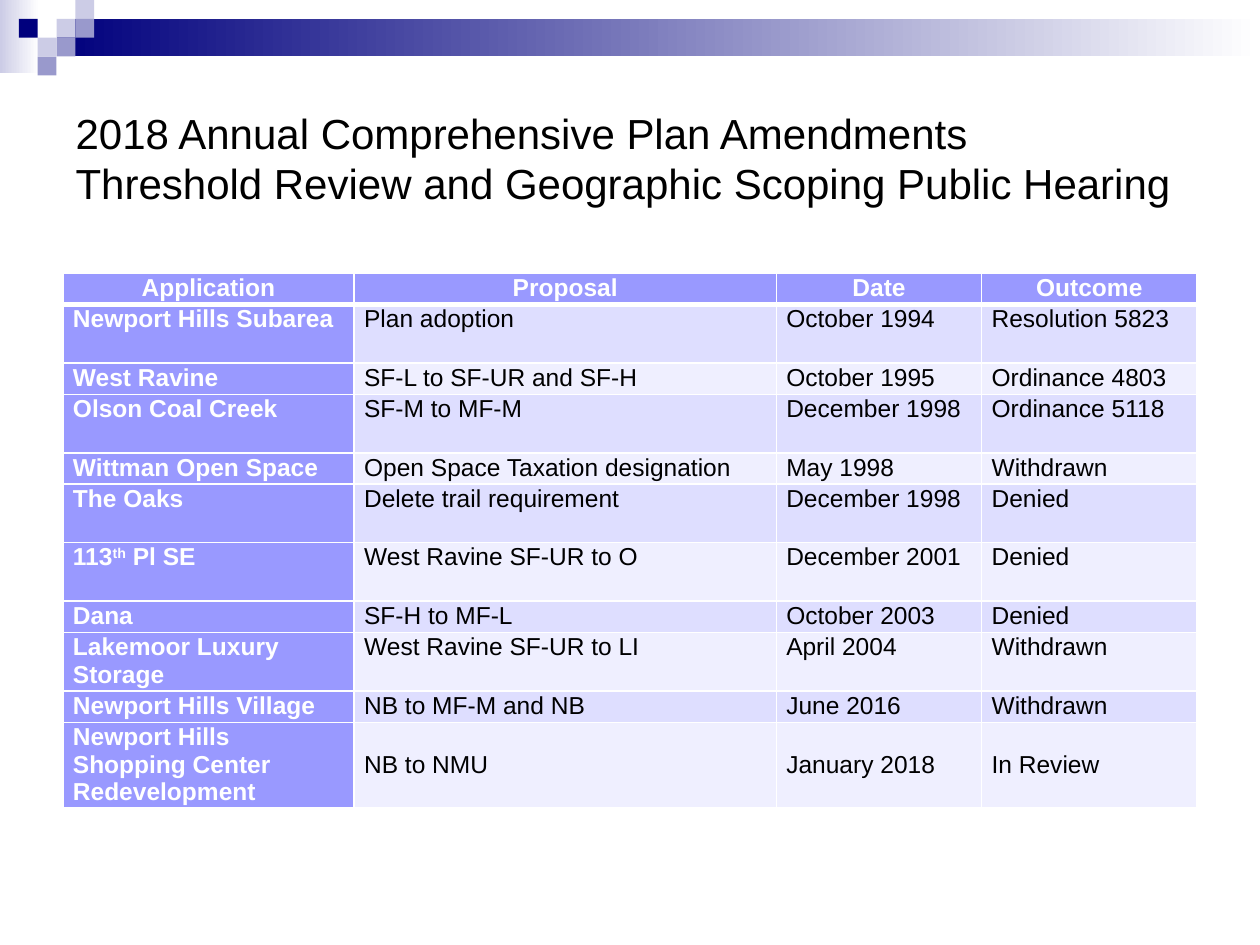
from lxml import etree
from pptx import Presentation
from pptx import util as u
from pptx.dml.color import RGBColor
from pptx.enum import shapes, text
from pptx.oxml import ns

SQUARE = 0.38
SQUARES = [  # column, row, colour
    (3, 1, "CCCCE6"), (4, 0, "CCCCE6"), (4, 1, "9999CC"), (2, 2, "CCCCE6"),
    (1, 1, "00007D"), (3, 2, "9999CC"), (2, 3, "9999CC"),
]

TITLE = ("2018 Annual Comprehensive Plan Amendments\v"
         "Threshold Review and Geographic Scoping Public Hearing")
COLUMN_WIDTHS = [5.87, 8.51, 4.14, 4.34]
ROW_HEIGHTS = {1: 0.63, 2: 1.18, 3: 1.73}  # by lines of text
# Lines of text, then the cells; ^ marks start and end of a superscript
ROWS = [
    (1, "Application", "Proposal", "Date", "Outcome"),
    (2, "Newport Hills Subarea", "Plan adoption", "October 1994", "Resolution 5823"),
    (1, "West Ravine", "SF-L to SF-UR and SF-H", "October 1995", "Ordinance 4803"),
    (2, "Olson Coal Creek", "SF-M to MF-M", "December 1998", "Ordinance 5118"),
    (1, "Wittman Open Space", "Open Space Taxation designation", "May 1998", "Withdrawn"),
    (2, "The Oaks", "Delete trail requirement", "December 1998", "Denied"),
    (2, "113^th^ Pl SE", "West Ravine SF-UR to O", "December 2001", "Denied"),
    (1, "Dana", "SF-H to MF-L", "October 2003", "Denied"),
    (2, "Lakemoor Luxury Storage", "West Ravine SF-UR to LI", "April 2004", "Withdrawn"),
    (1, "Newport Hills Village", "NB to MF-M and NB", "June 2016", "Withdrawn"),
    (3, "Newport Hills Shopping Center Redevelopment", "NB to NMU", "January 2018",
     "In Review"),
]


def color(value):
    return RGBColor.from_string(value)


class SlideBuilder:
    font_name = "Arial"
    accent = "9999FF"
    bands = ("EFEFFF", "DEDEFF")
    white = "FFFFFF"
    black = "000000"

    def __init__(self, slide):
        self.slide = slide

    def style_font(self, font, size, value, bold=False):
        font.name = self.font_name
        font.size = u.Pt(size)
        font.bold = bold
        font.color.rgb = color(value)

    def rectangle(self, left, top, width, height, *colors):
        """Draw a plain rectangle, or a left-to-right gradient for two colours."""
        shape = self.slide.shapes.add_shape(
            shapes.MSO_SHAPE.RECTANGLE, *map(u.Cm, (left, top, width, height)))
        shape.shadow.inherit = False
        shape.line.fill.background()
        if len(colors) == 1:
            shape.fill.solid()
            shape.fill.fore_color.rgb = color(colors[0])
        else:
            shape.fill.gradient()
            shape.fill.gradient_angle = 0
            for stop, value in zip(shape.fill.gradient_stops, colors):
                stop.color.rgb = color(value)

    def title(self, words, left, top, width, height):
        shape = self.slide.shapes.title
        shape.left, shape.top, shape.width, shape.height = map(
            u.Cm, (left, top, width, height))
        frame = shape.text_frame
        frame.text = words
        frame.word_wrap = True
        frame.auto_size = text.MSO_AUTO_SIZE.NONE
        frame.vertical_anchor = text.MSO_ANCHOR.MIDDLE
        paragraph = frame.paragraphs[0]
        paragraph.alignment = text.PP_ALIGN.LEFT
        self.style_font(paragraph.font, 24, self.black)

    def cell_borders(self, cell, top=1, bottom=1):
        properties = cell._tc.get_or_add_tcPr()
        for side, width in (("L", 1), ("R", 1), ("T", top), ("B", bottom)):
            line = etree.SubElement(properties, ns.qn(f"a:ln{side}"), w=str(u.Pt(width)))
            fill = etree.SubElement(line, ns.qn("a:solidFill"))
            etree.SubElement(fill, ns.qn("a:srgbClr"), val=self.white)

    def cell(self, cell, words, row, column):
        is_header = row == 0
        is_label = is_header or column == 0
        self.cell_borders(cell, top=3 if row == 1 else 1, bottom=3 if is_header else 1)
        cell.fill.solid()
        cell.fill.fore_color.rgb = color(self.accent if is_label else self.bands[row % 2])
        cell.margin_left = cell.margin_right = u.Cm(0.2)
        cell.margin_top = cell.margin_bottom = u.Cm(0.02)
        paragraph = cell.text_frame.paragraphs[0]
        paragraph.alignment = text.PP_ALIGN.CENTER if is_header else text.PP_ALIGN.LEFT
        self.style_font(paragraph.font, 14, self.white if is_label else self.black, is_label)
        for index, part in enumerate(words.split("^")):
            run = paragraph.add_run()
            run.text = part
            if index % 2:
                run._r.get_or_add_rPr().set("baseline", "30000")

    def table(self, rows, widths, left, top):
        heights = [ROW_HEIGHTS[lines] for lines, *_ in rows]
        table = self.slide.shapes.add_table(
            len(rows), len(widths), u.Cm(left), u.Cm(top),
            u.Cm(sum(widths)), u.Cm(sum(heights))).table
        for column, width in zip(table.columns, widths):
            column.width = u.Cm(width)
        for row, (height, (_, *words)) in enumerate(zip(heights, rows)):
            table.rows[row].height = u.Cm(height)
            for column, word in enumerate(words):
                self.cell(table.cell(row, column), word, row, column)
        for cell in list(table.rows[len(rows) - 1].cells)[1:]:
            cell.vertical_anchor = text.MSO_ANCHOR.MIDDLE


def main():
    presentation = Presentation()
    presentation.slide_width = u.Cm(25.4)
    presentation.slide_height = u.Cm(19.05)
    builder = SlideBuilder(presentation.slides.add_slide(presentation.slide_layouts[5]))

    builder.rectangle(0, 0, 0.79, 1.47, "CCCCE6", "FFFFFF")
    builder.rectangle(3 * SQUARE, SQUARE, 25.4 - 3 * SQUARE, 2 * SQUARE, "00007D", "FFFFFF")
    for column, row, value in SQUARES:
        builder.rectangle(column * SQUARE, row * SQUARE, SQUARE, SQUARE, value)
    builder.table(ROWS, COLUMN_WIDTHS, 1.27, 5.51)
    builder.title(TITLE, 1.27, 1.27, 22.86, 3.81)

    presentation.save("out.pptx")


if __name__ == "__main__":
    main()
